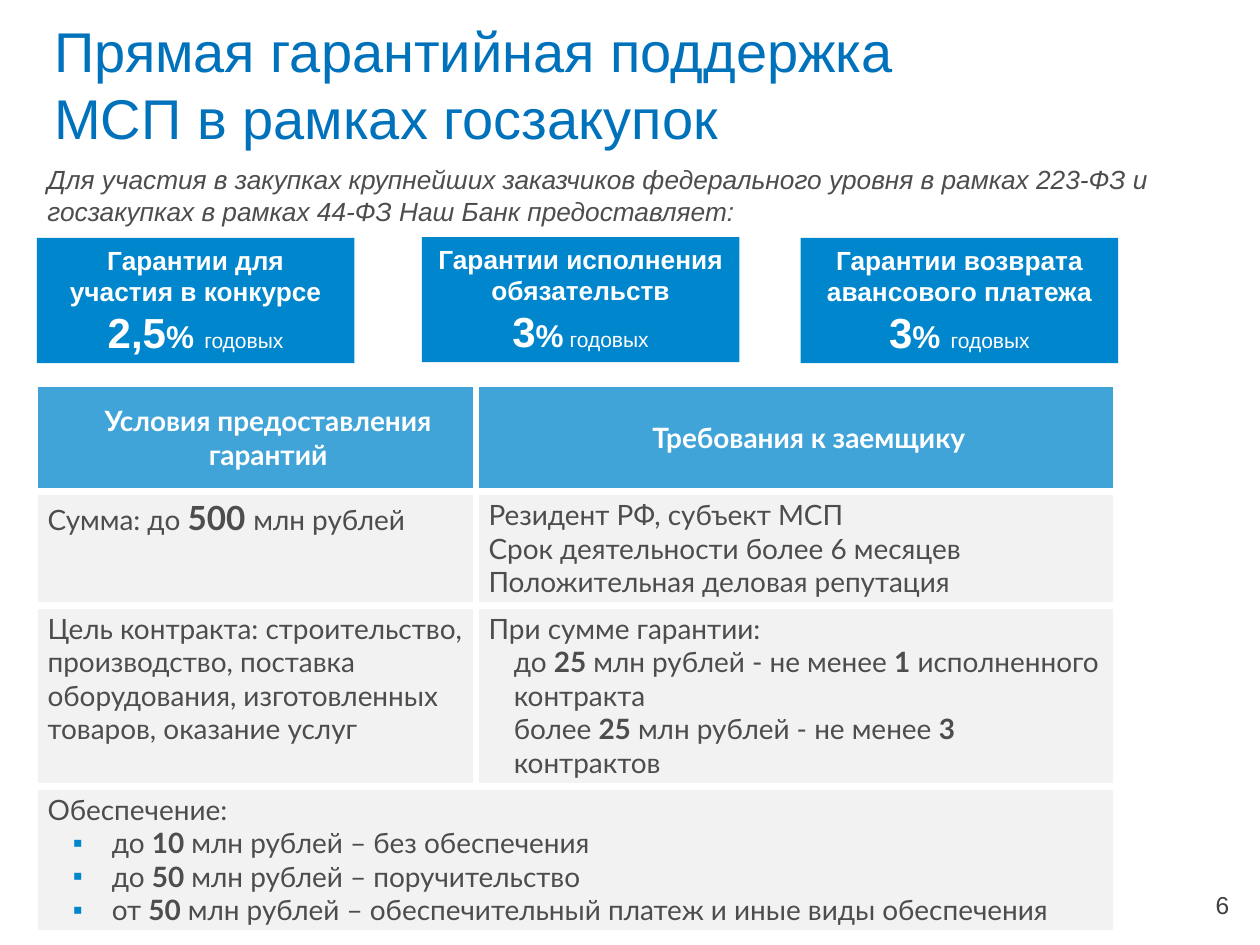
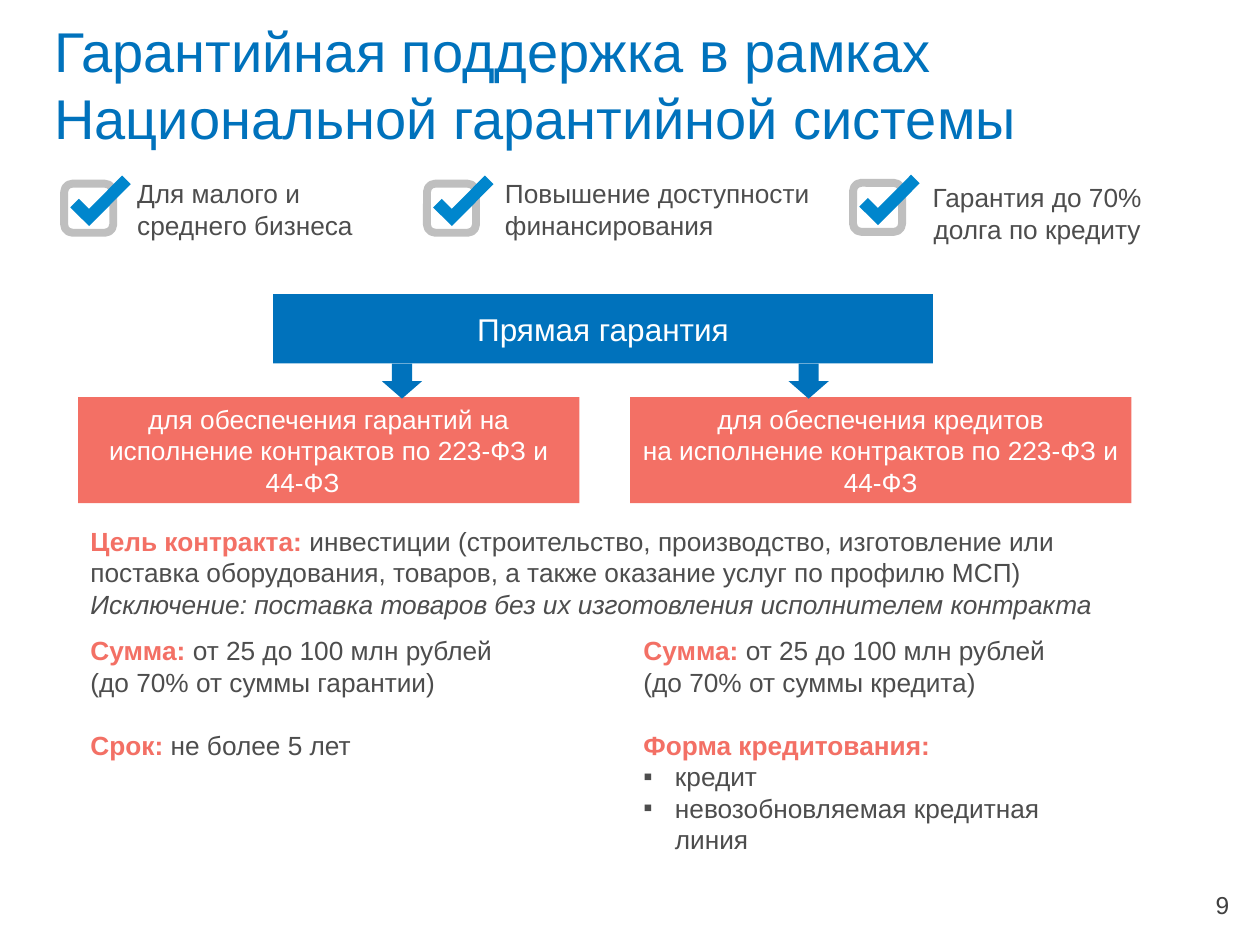
from lxml.etree import SubElement
from pptx import Presentation
from pptx.dml.color import RGBColor
from pptx.enum.shapes import MSO_SHAPE
from pptx.enum.text import MSO_ANCHOR, MSO_AUTO_SIZE, PP_ALIGN
from pptx.oxml.ns import qn
from pptx.util import Pt

TITLE_BLUE = RGBColor(0x00, 0x72, 0xBC)
BRIGHT_BLUE = RGBColor(0x00, 0x86, 0xCD)
CORAL = RGBColor(0xF3, 0x70, 0x65)
TEXT_GRAY = RGBColor(0x4D, 0x4D, 0x4D)
NUMBER_GRAY = RGBColor(0x40, 0x40, 0x40)
FRAME_GRAY = RGBColor(0xBF, 0xBF, 0xBF)
CELL_GRAY = RGBColor(0xF2, 0xF2, 0xF2)
WHITE = RGBColor(0xFF, 0xFF, 0xFF)

TABLE_FONT = "Lato"
LABEL = {"color": CORAL, "bold": True}


def add_bullet(para, color):
    properties = para._p.get_or_add_pPr()
    bullet_color = SubElement(properties, qn("a:buClr"))
    SubElement(bullet_color, qn("a:srgbClr"), val=str(color))
    SubElement(properties, qn("a:buFont"), typeface="Arial")
    SubElement(properties, qn("a:buChar"), char="▪")


def write(frame, *spans, size=15, color=TEXT_GRAY, font="Arial", bold=False,
          italic=False, align=PP_ALIGN.LEFT, margin=0, hanging=0,
          bullet=None, space_before=0, line_height=None):
    """Add one paragraph; a span is text or a (text, overrides) pair."""
    para = frame.paragraphs[0]
    if para.runs:
        para = frame.add_paragraph()
    properties = para._p.get_or_add_pPr()
    properties.set("marL", str(Pt(margin)))
    properties.set("indent", str(-Pt(hanging)))
    if bullet is not None:
        add_bullet(para, bullet)
    para.alignment = align
    if space_before:
        para.space_before = Pt(space_before)
    if line_height:
        para.line_spacing = Pt(line_height)
    for span in spans:
        text, changes = (span, {}) if isinstance(span, str) else span
        look = {"size": size, "color": color, "bold": bold, "italic": italic, **changes}
        for number, line in enumerate(text.split("\n")):
            if number:
                para.add_line_break()
            run = para.add_run()
            run.text = line
            run.font.name = font
            run.font.size = Pt(look["size"])
            run.font.bold = look["bold"]
            run.font.italic = look["italic"]
            run.font.color.rgb = look["color"]


def emphasised(text):
    """Split text into spans, with the parts between bars in bold."""
    return [(part, {"bold": number % 2 == 1})
            for number, part in enumerate(text.split("|")) if part]


def add_text_box(page, left, top, width, height, anchor=MSO_ANCHOR.TOP):
    frame = page.shapes.add_textbox(Pt(left), Pt(top), Pt(width), Pt(height)).text_frame
    frame.word_wrap = True
    frame.vertical_anchor = anchor
    return frame


def add_block(shapes, kind, left, top, width, height, fill=None):
    block = shapes.add_shape(kind, Pt(left), Pt(top), Pt(width), Pt(height))
    block.shadow.inherit = False
    block.line.fill.background()
    if fill is None:
        block.fill.background()
    else:
        block.fill.solid()
        block.fill.fore_color.rgb = fill
    return block


def add_panel(page, left, top, width, height, fill):
    """Draw a filled rectangle and return its text frame."""
    frame = add_block(page.shapes, MSO_SHAPE.RECTANGLE, left, top, width, height, fill).text_frame
    frame.word_wrap = True
    frame.vertical_anchor = MSO_ANCHOR.MIDDLE
    frame.margin_left = frame.margin_right = Pt(5.8)
    frame.margin_top = frame.margin_bottom = Pt(2.9)
    return frame


def add_page(deck, title, number):
    page = deck.slides.add_slide(deck.slide_layouts[5])
    box = page.shapes.title
    box.left, box.top, box.width, box.height = Pt(31), Pt(9.4), Pt(608), Pt(68.4)
    frame = box.text_frame
    frame.auto_size = MSO_AUTO_SIZE.NONE
    frame.word_wrap = True
    frame.vertical_anchor = MSO_ANCHOR.TOP
    frame.margin_left = frame.margin_top = frame.margin_right = frame.margin_bottom = 0
    write(frame, title, size=32, color=TITLE_BLUE, line_height=38.4)
    footer = add_text_box(page, 541.5, 502.5, 168, 29, MSO_ANCHOR.MIDDLE)
    write(footer, number, size=14, color=NUMBER_GRAY, align=PP_ALIGN.RIGHT)
    return page


def add_rate_card(page, left, top, heading, rate, gap_size):
    frame = add_panel(page, left, top, 181.5, 71.5, BRIGHT_BLUE)
    look = {"color": WHITE, "bold": True, "align": PP_ALIGN.CENTER}
    for line in heading:
        write(frame, line, **look)
    write(frame, (rate, {"size": 24}), ("%", {"size": 18}), (" ", {"size": gap_size}),
          ("годовых", {"size": 12, "bold": False}), **look)


def style_cell(cell, fill, opacity=None, anchor=MSO_ANCHOR.TOP):
    properties = cell._tc.get_or_add_tcPr()
    for side in ("lnL", "lnR", "lnT", "lnB"):
        line = SubElement(properties, qn(f"a:{side}"), w=str(Pt(4.5)))
        SubElement(SubElement(line, qn("a:solidFill")), qn("a:srgbClr"), val=str(WHITE))
    cell.fill.solid()
    cell.fill.fore_color.rgb = fill
    if opacity:
        fill_color = properties.find(qn("a:solidFill"))[0]
        SubElement(fill_color, qn("a:alpha"), val=str(opacity * 1000))
    cell.vertical_anchor = anchor


def add_terms_table(page, left, top):
    columns, rows = (252, 366), (62, 65, 103, 84)
    table = page.shapes.add_table(len(rows), len(columns), Pt(left), Pt(top),
                                  Pt(sum(columns)), Pt(sum(rows))).table
    table.first_row = table.horz_banding = False
    for column, width in zip(table.columns, columns):
        column.width = Pt(width)
    for row, height in zip(table.rows, rows):
        row.height = Pt(height)

    headings = ("Условия предоставления гарантий", "Требования к заемщику")
    for column, heading in enumerate(headings):
        cell = table.cell(0, column)
        style_cell(cell, BRIGHT_BLUE, opacity=75, anchor=MSO_ANCHOR.MIDDLE)
        write(cell.text_frame, heading, size=16, color=WHITE, font=TABLE_FONT, bold=True,
              align=PP_ALIGN.CENTER, margin=14.4)

    table.cell(3, 0).merge(table.cell(3, 1))
    plain, indented = {}, {"margin": 14.4}
    bulleted = {"margin": 36.7, "hanging": 22.3, "bullet": BRIGHT_BLUE}
    body = {
        (1, 0): [],
        (1, 1): [("Резидент РФ, субъект МСП", plain),
                 ("Срок деятельности более 6 месяцев", plain),
                 ("Положительная деловая репутация", plain)],
        (2, 0): [("Цель контракта: строительство, производство, поставка оборудования, "
                  "изготовленных товаров, оказание услуг", plain)],
        (2, 1): [("При сумме гарантии:", plain),
                 ("до |25| млн рублей - не менее |1| исполненного контракта", indented),
                 ("более |25| млн рублей - не менее |3| контрактов", indented)],
        (3, 0): [("Обеспечение:", plain),
                 ("до |10| млн рублей – без обеспечения", bulleted),
                 ("до |50| млн рублей – поручительство", bulleted),
                 ("от |50| млн рублей – обеспечительный платеж и иные виды обеспечения",
                  bulleted)],
    }
    for (row, column), lines in body.items():
        cell = table.cell(row, column)
        style_cell(cell, CELL_GRAY, anchor=MSO_ANCHOR.MIDDLE if row == 3 else MSO_ANCHOR.TOP)
        for text, layout in lines:
            write(cell.text_frame, *emphasised(text), size=16, font=TABLE_FONT, **layout)
    write(table.cell(1, 0).text_frame, "Сумма: до ", ("500 ", {"size": 19, "bold": True}),
          "млн рублей", size=16, font=TABLE_FONT)


def add_check_mark(page, left, top):
    group = page.shapes.add_group_shape()
    frame = add_block(group.shapes, MSO_SHAPE.ROUNDED_RECTANGLE, left, top, 28, 28)
    frame.line.color.rgb = FRAME_GRAY
    frame.line.width = Pt(4.5)
    tick = add_block(group.shapes, MSO_SHAPE.CORNER, left + 3.9, top - 0.7, 33.8, 15.1,
                     BRIGHT_BLUE)
    tick.adjustments[0] = tick.adjustments[1] = 0.46
    tick.rotation = 314.8


def add_benefit(page, left, top, text_box, lines, align=PP_ALIGN.LEFT):
    """Place a check mark and its caption; text_box is offset x, offset y, width."""
    add_check_mark(page, left, top)
    shift_x, shift_y, width = text_box
    frame = add_text_box(page, left + shift_x, top + shift_y, width, 44)
    for line in lines:
        write(frame, line, align=align)


def add_guarantee_tree(page, left, top):
    branches = (
        (0, ["для обеспечения гарантий на исполнение контрактов по 223-ФЗ и 44-ФЗ\t"]),
        (315.4, ["для обеспечения кредитов", "на исполнение контрактов по 223-ФЗ и 44-ФЗ"]),
    )
    for shift, lines in branches:
        frame = add_panel(page, left + shift, top + 59, 286.5, 60.5, CORAL)
        for line in lines:
            write(frame, line, color=WHITE, align=PP_ALIGN.CENTER)
    root = add_panel(page, left + 111.5, top, 377, 39.6, TITLE_BLUE)
    write(root, "Прямая гарантия", size=18, color=WHITE, align=PP_ALIGN.CENTER)
    for shift in (173.6, 406):
        add_block(page.shapes, MSO_SHAPE.DOWN_ARROW, left + shift, top + 39.8, 23, 20, TITLE_BLUE)


def add_conditions(page, left, top):
    purpose = add_text_box(page, left, top, 602, 62)
    write(purpose, ("Цель контракта: ", LABEL),
          "инвестиции (строительство, производство, изготовление или поставка "
          "оборудования, товаров, а также оказание услуг по профилю МСП)")
    write(purpose, "Исключение: поставка товаров без их изготовления исполнителем контракта",
          italic=True)

    columns = []
    for shift, base in ((0, "гарантии"), (316, "кредита")):
        frame = add_text_box(page, left + shift, top + 62.5, 286, 134.6)
        write(frame, ("Сумма: ", LABEL), "от 25 до 100 млн рублей")
        write(frame, f"(до 70% от суммы {base})")
        columns.append(frame)
    guarantee, credit = columns
    write(guarantee, ("Срок: ", LABEL), "не более 5 лет", space_before=18)
    write(credit, ("Форма кредитования:", LABEL), space_before=18)
    for form in ("кредит", "невозобновляемая кредитная линия"):
        write(credit, form, margin=18, hanging=18, bullet=TEXT_GRAY)


def build_procurement_page(deck):
    page = add_page(deck, "Прямая гарантийная поддержка\nМСП в рамках госзакупок", "6")
    intro = add_text_box(page, 20, 90, 663, 44)
    write(intro, "Для участия в закупках крупнейших заказчиков федерального уровня в рамках "
          "223-ФЗ и госзакупках в рамках 44-ФЗ Наш Банк предоставляет:", italic=True)
    cards = (
        (21, 136, ["Гарантии для", "участия в конкурсе"], "2,5", 21),
        (241, 135.5, ["Гарантии исполнения обязательств"], "3", 12),
        (457.5, 136, ["Гарантии возврата", "авансового платежа"], "3", 21),
    )
    for card in cards:
        add_rate_card(page, *card)
    add_terms_table(page, 20, 219)


def build_national_system_page(deck):
    page = add_page(deck, "Гарантийная поддержка в рамках Национальной гарантийной системы", "9")
    add_benefit(page, 36.7, 105, (34.6, -7, 148), ["Для малого и", "среднего бизнеса"])
    add_benefit(page, 244, 105, (37.5, -7, 191.5), ["Повышение доступности финансирования"])
    add_benefit(page, 487.5, 104.5, (26, -4.4, 158.4), ["Гарантия до 70%", "долга по кредиту"],
                align=PP_ALIGN.CENTER)
    add_guarantee_tree(page, 44.6, 168)
    add_conditions(page, 44.6, 296.6)


def main():
    deck = Presentation()
    deck.slide_width, deck.slide_height = Pt(720), Pt(540)
    build_procurement_page(deck)
    build_national_system_page(deck)
    deck.save("out.pptx")


if __name__ == "__main__":
    main()
